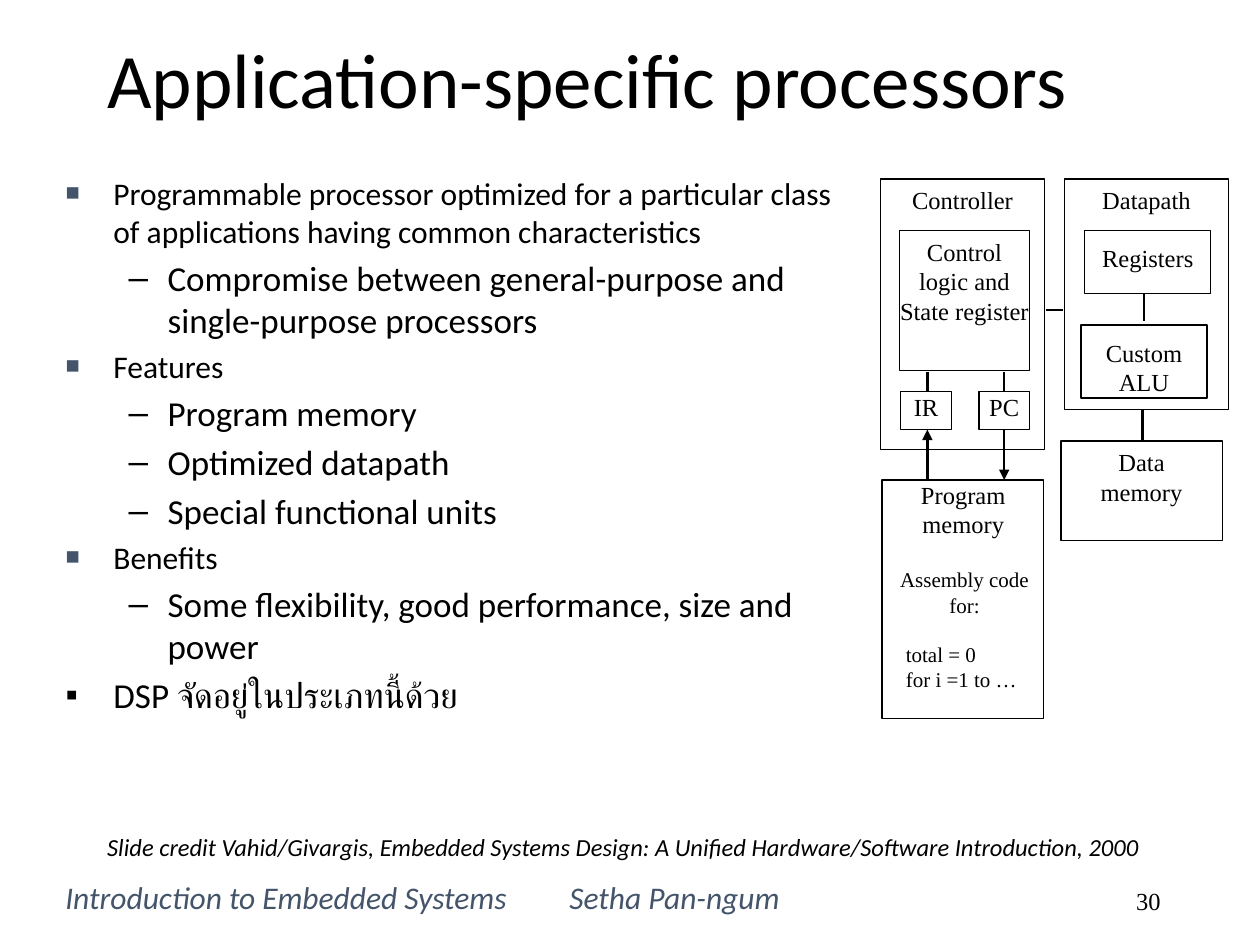
from dataclasses import dataclass

from lxml import etree
from pptx import Presentation
from pptx.dml.color import RGBColor
from pptx.enum.shapes import MSO_CONNECTOR, MSO_SHAPE
from pptx.enum.text import MSO_ANCHOR, MSO_AUTO_SIZE, PP_ALIGN
from pptx.oxml.ns import qn
from pptx.util import Inches, Pt

LEFT, CENTER, RIGHT = PP_ALIGN.LEFT, PP_ALIGN.CENTER, PP_ALIGN.RIGHT
TOP, MIDDLE = MSO_ANCHOR.TOP, MSO_ANCHOR.MIDDLE
NO_AUTOFIT = MSO_AUTO_SIZE.NONE
RECTANGLE = MSO_SHAPE.RECTANGLE
STRAIGHT = MSO_CONNECTOR.STRAIGHT


@dataclass(frozen=True)
class Theme:
    ink: str = "000000"
    accent: str = "44546A"
    body_font: str = "Calibri"
    diagram_font: str = "Times New Roman"
    title_size: int = 44
    detail_size: int = 20
    point_size: int = 18
    label_size: int = 14
    code_size: int = 12
    box_line: float = 0.75
    wire_line: float = 1.5


THEME = Theme()
STANDARD_INSETS = (0.1, 0.05, 0.1, 0.05)
SNUG_INSETS = (0, 0.05, 0, 0.05)
LOW_INSETS = (0, 0.1, 0, 0.05)
NO_INSETS = (0, 0, 0, 0)

POINT = dict(size=THEME.point_size, indent=(0.38, -0.38), space_before=Pt(3.6),
             bullet=("■", THEME.accent, 75))
DETAIL = dict(size=THEME.detail_size, indent=(0.81, -0.31), space_before=Pt(4),
              level=1, bullet=("–", THEME.ink, 100))
REMARK = dict(DETAIL, indent=(0.38, -0.38), level=0, bullet=("▪", THEME.ink, 100))
LABEL = dict(size=THEME.label_size, font_name=THEME.diagram_font, alignment=CENTER)
CODE = dict(LABEL, size=THEME.code_size, alignment=LEFT, indent=(0.08, 0))

OUTLINE = [
    ("Programmable processor optimized for a particular class of applications "
     "having common characteristics", POINT),
    ("Compromise between general-purpose and single-purpose processors", DETAIL),
    ("Features", POINT),
    ("Program memory", DETAIL),
    ("Optimized datapath", DETAIL),
    ("Special functional units", DETAIL),
    ("Benefits", POINT),
    ("Some flexibility, good performance, size and power", DETAIL),
    ("DSP จัดอยู่ในประเภทนี้ด้วย", REMARK),
]

UNITS = [
    (["Controller"], (6.99, 1.42, 1.3, 2.15), STANDARD_INSETS),
    (["Datapath"], (8.45, 1.42, 1.3, 1.83), STANDARD_INSETS),
    (["Control", "logic and State register"], (7.14, 1.83, 1.03, 1.11), SNUG_INSETS),
    (["IR"], (7.15, 3.11, 0.4, 0.3), NO_INSETS),
    (["PC"], (7.77, 3.11, 0.4, 0.3), NO_INSETS),
    (["Registers"], (8.61, 1.83, 1, 0.5), LOW_INSETS),
    (["Custom", "ALU"], (8.58, 2.58, 1, 0.58), LOW_INSETS),
    (["Data", "memory"], (8.42, 3.5, 1.28, 0.79), SNUG_INSETS),
    ([], (7, 3.81, 1.28, 1.89), NO_INSETS),
]

IR_X, PC_X = 7.36, 7.97
WIRES = [
    ((8.3, 2.46), (8.44, 2.46)),
    ((9.08, 2.33), (9.08, 2.55)),
    ((9.07, 3.25), (9.07, 3.51)),
    ((IR_X, 2.95), (IR_X, 3.1)),
    ((PC_X, 2.95), (PC_X, 3.1)),
]
FETCHES = [
    ((IR_X, 3.81), (IR_X, 3.41)),
    ((PC_X, 3.41), (PC_X, 3.81)),
]


def apply_format(target, values):
    for attribute, value in values.items():
        setattr(target, attribute, value)


class SlideBuilder:
    def __init__(self, slide, theme):
        self.slide = slide
        self.theme = theme

    def paragraph(self, paragraph, wording, size, font_name=None, color=None,
                  italic=False, indent=(0, 0), bullet=None, tab=None, **layout):
        apply_format(paragraph, layout)
        run = paragraph.add_run()
        run.text = wording
        apply_format(run.font, dict(size=Pt(size), italic=italic,
                                    name=font_name or self.theme.body_font))
        run.font.color.rgb = RGBColor.from_string(color or self.theme.ink)
        properties = paragraph._p.get_or_add_pPr()
        for name, length in zip(("marL", "indent"), indent):
            properties.set(name, str(int(Inches(length))))
        if bullet:
            symbol, bullet_color, percent = bullet
            tint = etree.SubElement(properties, qn("a:buClr"))
            etree.SubElement(tint, qn("a:srgbClr"), val=bullet_color)
            etree.SubElement(properties, qn("a:buSzPct"), val=str(percent * 1000))
            etree.SubElement(properties, qn("a:buChar"), char=symbol)
        else:
            etree.SubElement(properties, qn("a:buNone"))
        if tab:
            stops = etree.SubElement(properties, qn("a:tabLst"))
            etree.SubElement(stops, qn("a:tab"), pos=str(int(Inches(tab))), algn="l")

    def fill_text(self, holder, entries, insets=STANDARD_INSETS, anchor=TOP):
        frame = holder.text_frame
        sides = ("margin_left", "margin_top", "margin_right", "margin_bottom")
        apply_format(frame, dict(zip(sides, map(Inches, insets)), word_wrap=True,
                                 auto_size=NO_AUTOFIT, vertical_anchor=anchor))
        for position, (wording, style) in enumerate(entries):
            paragraph = frame.add_paragraph() if position else frame.paragraphs[0]
            self.paragraph(paragraph, wording, **style)

    def placeholder(self, index, bounds, entries, anchor=TOP):
        holder = self.slide.placeholders[index]
        sides = ("left", "top", "width", "height")
        apply_format(holder, dict(zip(sides, map(Inches, bounds))))
        self.fill_text(holder, entries, anchor=anchor)

    def note(self, bounds, entries, **frame_style):
        holder = self.slide.shapes.add_textbox(*map(Inches, bounds))
        self.fill_text(holder, entries, **frame_style)

    def unit(self, labels, bounds, insets):
        box = self.slide.shapes.add_shape(RECTANGLE, *map(Inches, bounds))
        box.shadow.inherit = False
        box.fill.background()
        self.stroke(box.line, self.theme.box_line)
        self.fill_text(box, [(label, LABEL) for label in labels], insets)

    def stroke(self, line, width):
        line.color.rgb = RGBColor.from_string(self.theme.ink)
        line.width = Pt(width)

    def wire(self, start, end, arrow=False):
        connector = self.slide.shapes.add_connector(STRAIGHT, *map(Inches, start + end))
        self.stroke(connector.line, self.theme.wire_line)
        properties = connector.element.spPr
        if arrow:
            etree.SubElement(properties.find(qn("a:ln")), qn("a:tailEnd"), type="triangle")
        etree.SubElement(properties, qn("a:effectLst"))


def main():
    deck = Presentation()
    deck.slide_width, deck.slide_height = Inches(10), Inches(7.5)
    builder = SlideBuilder(deck.slides.add_slide(deck.slide_layouts[3]), THEME)

    heading = dict(size=THEME.title_size, alignment=LEFT, line_spacing=0.9)
    builder.placeholder(0, (0.75, 0.25, 8.5, 0.83),
                        [("Application-specific processors", heading)], MIDDLE)
    builder.placeholder(1, (0.42, 1.33, 6.33, 5.33), OUTLINE)
    credit = dict(size=THEME.label_size, italic=True, indent=(0.25, -0.25),
                  line_spacing=0.9, space_before=Pt(10))
    builder.placeholder(2, (0.75, 6.58, 8.5, 0.42), [
        ("Slide credit Vahid/Givargis, Embedded Systems Design: A Unified "
         "Hardware/Software Introduction, 2000", credit)])

    footer = dict(size=THEME.point_size, color=THEME.accent, italic=True, tab=5.15)
    builder.note((0.42, 6.92, 9.08, 0.42),
                 [("Introduction to Embedded Systems\tSetha Pan-ngum", footer)])
    builder.note((7.06, 6.95, 2.25, 0.4), [("30", dict(LABEL, alignment=RIGHT))],
                 anchor=MIDDLE)

    for labels, bounds, insets in UNITS:
        builder.unit(labels, bounds, insets)
    builder.note((7, 3.76, 1.29, 0.38), [("Program memory", LABEL)], insets=SNUG_INSETS)
    builder.note((7.11, 4.45, 1.09, 0.8), [
        ("Assembly code for:", dict(CODE, alignment=CENTER, indent=(0, 0))),
        ("total = 0", dict(CODE, space_before=Pt(14))),
        ("for i =1 to …", CODE)], insets=SNUG_INSETS)
    for start, end in WIRES:
        builder.wire(start, end)
    for start, end in FETCHES:
        builder.wire(start, end, arrow=True)

    deck.save("out.pptx")


if __name__ == "__main__":
    main()
